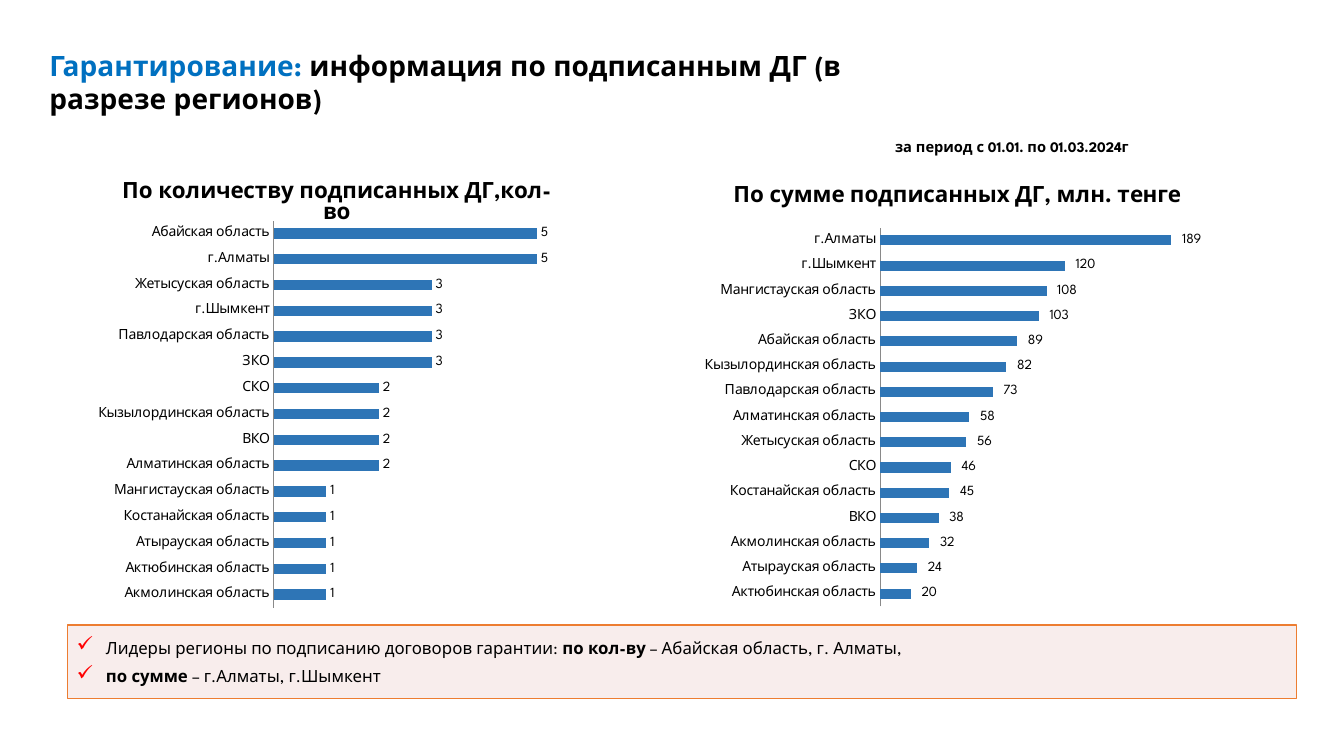
from lxml import etree
from pptx import Presentation
from pptx import util as u
from pptx.chart.data import CategoryChartData
from pptx.dml.color import RGBColor
from pptx.enum import chart as ch, shapes, text
from pptx.oxml import ns

COLORS = {"black": "000000", "blue": "0070C0", "bar": "2E75B6", "axis": "898989",
          "pink": "F2DCDB", "orange": "ED7D31", "red": "FF0000"}
FONT = "League Spartan"
SUM_FORMAT = r'_-* #\ ##0_р_._-;\-* #\ ##0_р_._-;_-* "-"'

COUNT_BY_REGION = {
    "Акмолинская область": 1, "Актюбинская область": 1, "Атырауская область": 1,
    "Костанайская область": 1, "Мангистауская область": 1, "Алматинская область": 2,
    "ВКО": 2, "Кызылординская область": 2, "СКО": 2, "ЗКО": 3,
    "Павлодарская область": 3, "г.Шымкент": 3, "Жетысуская область": 3,
    "г.Алматы": 5, "Абайская область": 5,
}
SUM_BY_REGION = {
    "Актюбинская область": 20, "Атырауская область": 24, "Акмолинская область": 32,
    "ВКО": 38, "Костанайская область": 45, "СКО": 46, "Жетысуская область": 56,
    "Алматинская область": 58, "Павлодарская область": 73,
    "Кызылординская область": 82, "Абайская область": 89, "ЗКО": 103,
    "Мангистауская область": 108, "г.Шымкент": 120, "г.Алматы": 189,
}


def rgb(name):
    return RGBColor.from_string(COLORS[name])


def set_font(font, size=10, bold=False, color="black"):
    font.name, font.size, font.bold = FONT, u.Pt(size), bold
    font.color.rgb = rgb(color)


def add_run(paragraph, wording, **style):
    run = paragraph.add_run()
    run.text = wording
    set_font(run.font, **style)


def add_xml(parent, tag, **attributes):
    child = etree.SubElement(parent, ns.qn(tag))
    for key, value in attributes.items():
        child.set(key, str(value))
    return child


class RegionSlide:
    def __init__(self, deck):
        self.deck = deck
        self.slide = deck.slides.add_slide(deck.slide_layouts[6])

    def place(self, left, top, width, height):
        across, down = self.deck.slide_width / 100, self.deck.slide_height / 100
        return [round(v) for v in (left * across, top * down, width * across, height * down)]

    def heading(self, area, runs, size, wrap=True):
        frame = self.slide.shapes.add_textbox(*self.place(*area)).text_frame
        frame.word_wrap = wrap
        frame.auto_size = text.MSO_AUTO_SIZE.SHAPE_TO_FIT_TEXT
        for wording, color in runs:
            add_run(frame.paragraphs[0], wording, size=size, bold=True, color=color)

    def checklist(self, area, items):
        banner = self.slide.shapes.add_shape(shapes.MSO_SHAPE.RECTANGLE, *self.place(*area))
        banner.shadow.inherit = False
        banner.fill.solid()
        banner.fill.fore_color.rgb = rgb("pink")
        tint = next(banner.fill._xPr.iter(ns.qn("a:srgbClr")))
        add_xml(tint, "a:alpha", val=50000)
        banner.line.color.rgb = rgb("orange")
        banner.line.width = u.Pt(1)
        frame = banner.text_frame
        frame.word_wrap = True
        frame.vertical_anchor = text.MSO_ANCHOR.MIDDLE
        frame.margin_left = frame.margin_right = u.Inches(0.08)
        frame.margin_top = frame.margin_bottom = u.Inches(0.04)
        for index, runs in enumerate(items):
            item = frame.add_paragraph() if index else frame.paragraphs[0]
            item.alignment = text.PP_ALIGN.LEFT
            item.space_after = u.Pt(6)
            props = item._p.get_or_add_pPr()
            props.set("marL", str(u.Inches(0.3)))
            props.set("indent", str(u.Inches(-0.29)))
            add_xml(add_xml(props, "a:buClr"), "a:srgbClr", val=COLORS["red"])
            add_xml(props, "a:buSzPct", val=125000)
            add_xml(props, "a:buChar", char="✓")
            for wording, bold in runs:
                add_run(item, wording, size=12, bold=bold)

    def bars(self, area, title, values, top_value, plot, number_format="General"):
        data = CategoryChartData(number_format=number_format)
        data.categories = list(values)
        data.add_series("Series 1", list(values.values()))
        chart = self.slide.shapes.add_chart(
            ch.XL_CHART_TYPE.BAR_CLUSTERED, *self.place(*area), data).chart
        set_font(chart.font)
        chart.has_legend = False
        chart.has_title = True
        add_run(chart.chart_title.text_frame.paragraphs[0], title, size=16, bold=True)

        regions, scale = chart.category_axis, chart.value_axis
        regions.major_tick_mark = ch.XL_TICK_MARK.NONE
        regions.format.line.color.rgb = rgb("axis")
        set_font(regions.tick_labels.font)
        scale.minimum_scale, scale.maximum_scale = 0, top_value
        scale.has_major_gridlines = False
        scale.visible = False

        bar_plot = chart.plots[0]
        bar_plot.gap_width = 150
        bar_plot.vary_by_categories = False
        fill = bar_plot.series[0].format.fill
        fill.solid()
        fill.fore_color.rgb = rgb("bar")
        labels = bar_plot.series[0].data_labels
        labels.show_value = True
        labels.position = ch.XL_LABEL_POSITION.OUTSIDE_END
        labels.number_format = number_format
        labels.number_format_is_linked = False
        set_font(labels.font)
        self.fix_plot(chart, plot)

    def fix_plot(self, chart, plot):
        plot_area = next(chart._chartSpace.iter(ns.qn("c:plotArea")))
        for old in plot_area.findall(ns.qn("c:layout")):
            plot_area.remove(old)
        layout = etree.Element(ns.qn("c:layout"))
        plot_area.insert(0, layout)
        manual = add_xml(layout, "c:manualLayout")
        add_xml(manual, "c:layoutTarget", val="inner")
        for side in ("xMode", "yMode"):
            add_xml(manual, f"c:{side}", val="edge")
        for side, percent in zip("xywh", plot):
            add_xml(manual, f"c:{side}", val=percent / 100)


def main():
    deck = Presentation()
    deck.slide_width, deck.slide_height = u.Inches(13.33), u.Inches(7.5)
    page = RegionSlide(deck)
    page.heading((2.93, 5.73, 68.57, 10.27),
                 [("Гарантирование: ", "blue"),
                  ("информация по подписанным ДГ (в разрезе регионов)", "black")], size=20)
    page.heading((65.87, 17.6, 19.73, 3.73),
                 [("за период с 01.01. по 01.03.2024г", "black")], size=10.5, wrap=False)
    page.checklist((5.03, 82.67, 91.45, 9.73), [
        [("Лидеры регионы по подписанию договоров гарантии: ", False),
         ("по кол-ву", True), (" – Абайская область, г. Алматы,", False)],
        [("по сумме ", True), ("– г.Алматы, г.Шымкент", False)],
    ])
    page.bars((3.53, 21.33, 43.06, 61.33), "По количеству подписанных ДГ,кол-во",
              COUNT_BY_REGION, 6, (39.1, 12.8, 54.6, 83.5))
    page.bars((46.66, 21.87, 49.14, 60.4), "По сумме подписанных ДГ, млн. тенге",
              SUM_BY_REGION, 200, (38.3, 13.7, 46.7, 82.9), SUM_FORMAT)
    deck.save("out.pptx")


if __name__ == "__main__":
    main()
